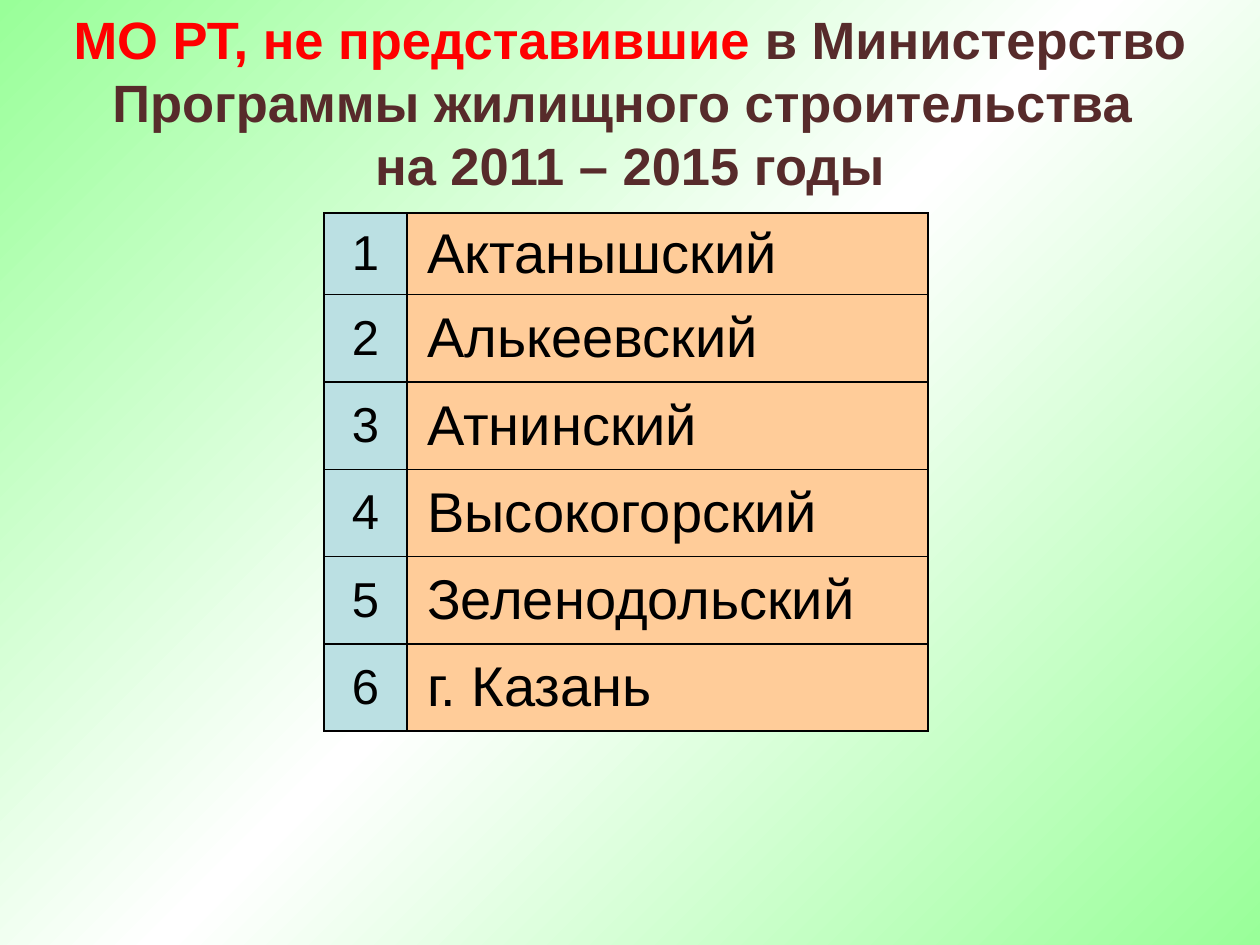
from copy import deepcopy
from dataclasses import dataclass

from lxml.etree import SubElement
from pptx import Presentation
from pptx.dml.color import RGBColor
from pptx.enum.text import MSO_ANCHOR, MSO_AUTO_SIZE, PP_ALIGN
from pptx.oxml.ns import qn
from pptx.slide import Slide
from pptx.table import _Cell
from pptx.text.text import _Paragraph
from pptx.util import Cm, Pt


@dataclass(frozen=True)
class Theme:
    font: str = "Arial"
    green: str = "99FF99"
    white: str = "FFFFFF"
    red: str = "FF0000"
    brown: str = "572B2B"
    black: str = "000000"
    blue: str = "BBE0E3"
    orange: str = "FFCC99"
    title_size: int = 30
    number_size: int = 28
    district_size: int = 32
    border: float = 1


@dataclass(frozen=True)
class ColumnStyle:
    width: float
    fill: str
    size: int
    align: PP_ALIGN
    left: float
    right: float


THEME = Theme()
COLUMNS = (
    ColumnStyle(1.67, THEME.blue, THEME.number_size, PP_ALIGN.CENTER, 0.25, 0.25),
    ColumnStyle(10.51, THEME.orange, THEME.district_size, PP_ALIGN.LEFT, 0.41, 0.03),
)
DISTRICTS = (
    "Актанышский",
    "Алькеевский",
    "Атнинский",
    "Высокогорский",
    "Зеленодольский",
    "г. Казань",
)
FIRST_ROW_HEIGHT = 1.65
ROW_HEIGHT = 1.76


def add_text(paragraph: _Paragraph, text: str, *, size: float, color: str,
             bold: bool = False, align: PP_ALIGN = PP_ALIGN.CENTER) -> None:
    paragraph.alignment = align
    run = paragraph.add_run()
    run.text = text
    run.font.name = THEME.font
    run.font.size = Pt(size)
    run.font.bold = bold
    run.font.color.rgb = RGBColor.from_string(color)


def paint_background(slide: Slide) -> None:
    fill = slide.background.fill
    fill.gradient()
    fill.gradient_angle = 315
    first_stop = next(slide.element.iter(qn("a:gs")))
    first_stop.addnext(deepcopy(first_stop))
    colors = (THEME.green, THEME.white, THEME.green)
    for stop, position, color in zip(fill.gradient_stops, (0, 0.5, 1), colors):
        stop.position = position
        stop.color.rgb = RGBColor.from_string(color)


def add_title(slide: Slide) -> None:
    title = slide.shapes.title
    title.left, title.top, title.width, title.height = Cm(0), Cm(0), Cm(25.4), Cm(4.11)
    frame = title.text_frame
    frame.word_wrap = True
    frame.auto_size = MSO_AUTO_SIZE.SHAPE_TO_FIT_TEXT
    heading = frame.paragraphs[0]
    add_text(heading, "МО РТ, не представившие ",
             size=THEME.title_size, color=THEME.red, bold=True)
    for paragraph, text in (
        (heading, "в Министерство Программы жилищного строительства "),
        (frame.add_paragraph(), "на 2011 – 2015 годы"),
    ):
        add_text(paragraph, text, size=THEME.title_size, color=THEME.brown, bold=True)


def add_borders(cell: _Cell) -> None:
    properties = cell._tc.get_or_add_tcPr()
    for position, side in enumerate(("a:lnL", "a:lnR", "a:lnT", "a:lnB")):
        line = SubElement(properties, qn(side), w=str(Pt(THEME.border)))
        SubElement(SubElement(line, qn("a:solidFill")), qn("a:srgbClr"), val=THEME.black)
        properties.insert(position, line)


def fill_cell(cell: _Cell, text: str, style: ColumnStyle) -> None:
    cell.fill.solid()
    cell.fill.fore_color.rgb = RGBColor.from_string(style.fill)
    cell.vertical_anchor = MSO_ANCHOR.MIDDLE
    cell.margin_left, cell.margin_right = Cm(style.left), Cm(style.right)
    cell.margin_top = cell.margin_bottom = Cm(0)
    add_text(cell.text_frame.paragraphs[0], text,
             size=style.size, color=THEME.black, align=style.align)
    add_borders(cell)


def add_districts(slide: Slide) -> None:
    heights = [FIRST_ROW_HEIGHT] + [ROW_HEIGHT] * (len(DISTRICTS) - 1)
    width = sum(style.width for style in COLUMNS)
    table = slide.shapes.add_table(len(DISTRICTS), len(COLUMNS), Cm(6.53), Cm(4.29),
                                   Cm(width), Cm(sum(heights))).table
    table.first_row = table.horz_banding = False
    for column, style in zip(table.columns, COLUMNS):
        column.width = Cm(style.width)
    for number, (row, height, district) in enumerate(
            zip(table.rows, heights, DISTRICTS), start=1):
        row.height = Cm(height)
        for cell, text, style in zip(row.cells, (str(number), district), COLUMNS):
            fill_cell(cell, text, style)


def main() -> None:
    presentation = Presentation()
    presentation.slide_width, presentation.slide_height = Cm(25.4), Cm(19.05)
    slide = presentation.slides.add_slide(presentation.slide_layouts[5])
    paint_background(slide)
    add_title(slide)
    add_districts(slide)
    presentation.save("out.pptx")


if __name__ == "__main__":
    main()
